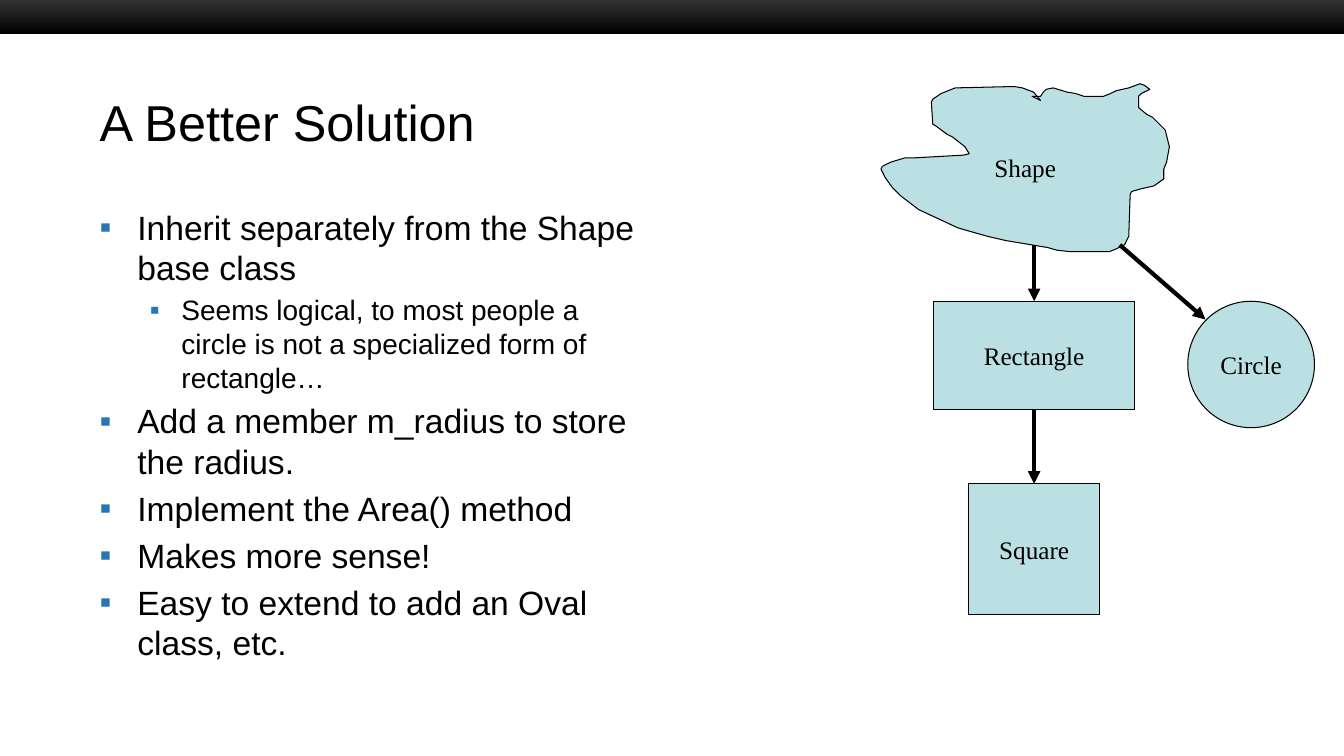
from lxml import etree
from pptx import Presentation
from pptx.dml.color import RGBColor
from pptx.enum.shapes import MSO_CONNECTOR, MSO_SHAPE
from pptx.enum.text import MSO_ANCHOR, PP_ALIGN
from pptx.oxml.ns import qn
from pptx.util import Pt

RECT = MSO_SHAPE.RECTANGLE
OVAL = MSO_SHAPE.OVAL
LINE = MSO_CONNECTOR.STRAIGHT
MIDDLE = MSO_ANCHOR.MIDDLE
LEFT = PP_ALIGN.LEFT
CENTER = PP_ALIGN.CENTER
TOP, BOTTOM = 0, 2

BLACK = "000000"
TEAL = "BBE0E3"
BLUE = "2675B4"

LEVELS = [(24, 27), (20, 58.5)]
HANGS = [27, 22.5]
POINTS = [
    (0, "Inherit separately from the Shape base class"),
    (1, "Seems logical, to most people a circle is not a specialized form of rectangle…"),
    (0, "Add a member m_radius to store the radius."),
    (0, "Implement the Area() method"),
    (0, "Makes more sense!"),
    (0, "Easy to extend to add an Oval class, etc."),
]
BLOB = [
    (113.8, 11.5), (109.4, 6.5), (100.8, 2.9), (95, 2.2), (53.3, 2.9),
    (43.2, 7.2), (36.7, 10.8), (36, 13), (37.4, 28.8), (38.9, 30.2),
    (46.8, 36), (51.1, 38.2), (59.8, 45.4), (62.6, 49.7), (59, 51.1),
    (23, 52.6), (17.3, 53.3), (7.2, 56.2), (1.4, 59), (0, 61.2),
    (2.9, 67), (7.9, 74.2), (13.7, 79.9), (27.4, 90), (39.6, 96.5),
    (55.4, 103), (75.6, 109.4), (89.3, 112.3), (100.8, 113.8),
    (118.8, 116.6), (126, 118.8), (136.1, 120.2), (163.4, 119.5),
    (168.5, 118.1), (174.2, 115.2), (177.1, 109.4), (177.8, 79.2),
    (179.3, 77), (185.8, 74.9), (195.1, 72.7), (201.6, 67.7),
    (202.3, 61.2), (204.5, 56.2), (205.9, 44.6), (203, 33.1),
    (197.3, 27.4), (193.7, 23.8), (190.1, 21.6), (183.6, 16.6),
    (184.3, 8.6), (185.8, 7.2), (191.5, 4.3), (187.9, 0.7), (185, 0.4),
    (177.1, 2.9), (167.8, 5), (164.2, 7.2), (159.1, 9.4), (144.7, 8.6),
    (139, 7.2), (133.2, 5.8), (123.1, 2.9), (118.1, 4.3), (116, 6.5),
    (113.8, 8.6), (108, 8.6),
]


def color(text):
    return RGBColor.from_string(text)


def set_font(para, name, size):
    para.font.name = name
    para.font.size = Pt(size)
    para.font.color.rgb = color(BLACK)


def add_bar(slide, box):
    bar = slide.shapes.add_shape(RECT, *map(Pt, box))
    bar.shadow.inherit = False
    bar.line.fill.background()
    bar.fill.gradient()
    bar.fill.gradient_angle = 270
    for stop, (place, tone) in zip(bar.fill.gradient_stops, [(0, "333333"), (1, BLACK)]):
        stop.position = place
        stop.color.rgb = color(tone)


def add_title(slide, box):
    title = slide.shapes.title
    title.left, title.top, title.width, title.height = map(Pt, box)
    frame = title.text_frame
    frame.text = "A Better Solution"
    frame.vertical_anchor = MIDDLE
    para = frame.paragraphs[0]
    para.alignment = LEFT
    set_font(para, "Arial", 36)


def add_bullet(para, level):
    props = para._p.get_or_add_pPr()
    props.set("marL", str(Pt(LEVELS[level][1])))
    props.set("indent", str(-Pt(HANGS[level])))
    tint = etree.SubElement(props, qn("a:buClr"))
    etree.SubElement(tint, qn("a:srgbClr"), val=BLUE)
    etree.SubElement(props, qn("a:buFont"), typeface="Arial")
    etree.SubElement(props, qn("a:buChar"), char="▪")


def add_body(slide, box):
    frame = slide.shapes.add_textbox(*map(Pt, box)).text_frame
    frame.word_wrap = True
    for index, (level, text) in enumerate(POINTS):
        para = frame.add_paragraph() if index else frame.paragraphs[0]
        para.text = text
        para.level = level
        add_bullet(para, level)
        size = LEVELS[level][0]
        para.space_before = Pt(size * 0.2 if index else 0)
        set_font(para, "Arial", size)


def style_node(node, text):
    node.shadow.inherit = False
    node.fill.solid()
    node.fill.fore_color.rgb = color(TEAL)
    node.line.color.rgb = color(BLACK)
    node.line.width = Pt(0.75)
    frame = node.text_frame
    frame.text = text
    frame.vertical_anchor = MIDDLE
    para = frame.paragraphs[0]
    para.alignment = CENTER
    set_font(para, "Times New Roman", 18)


def add_node(slide, kind, text, box):
    node = slide.shapes.add_shape(kind, *map(Pt, box))
    style_node(node, text)
    return node


def add_blob(slide, text, left, top):
    start, *rest = BLOB
    path = slide.shapes.build_freeform(*start, scale=Pt(1))
    path.add_line_segments(rest, close=True)
    style_node(path.convert_to_shape(Pt(left), Pt(top)), text)


def add_arrow(slide, start, end):
    arrow = slide.shapes.add_connector(LINE, *map(Pt, start + end))
    arrow.line.color.rgb = color(BLACK)
    arrow.line.width = Pt(3)
    etree.SubElement(arrow.line._get_or_add_ln(), qn("a:tailEnd"), type="triangle")
    etree.SubElement(arrow._element.spPr, qn("a:effectLst"))
    return arrow


def add_tree(slide, box):
    left, top, width, height = box
    mid = left + 109.4
    row = top + 155.4
    low = top + height - 93.6
    add_blob(slide, "Shape", left, top)
    block = add_node(slide, RECT, "Rectangle", (mid - 72, row, 144, 77.2))
    drop = add_arrow(slide, (mid, top + 115.2), (mid, row))
    drop.end_connect(block, TOP)
    link = add_arrow(slide, (mid, row + 77.2), (mid, low))
    square = add_node(slide, RECT, "Square", (mid - 46.8, low, 93.6, 93.6))
    link.begin_connect(block, BOTTOM)
    link.end_connect(square, TOP)
    add_node(slide, OVAL, "Circle", (left + width - 90.5, row, 90.5, 90.3))
    add_arrow(slide, (left + 170.6, top + 115.2), (left + 231.8, row + 13))


def main():
    deck = Presentation()
    deck.slide_width, deck.slide_height = Pt(960), Pt(540)
    slide = deck.slides.add_slide(deck.slide_layouts[5])
    add_bar(slide, (0, 0, 960, 24))
    add_title(slide, (64, 60, 832, 54))
    add_body(slide, (64, 144, 408, 306))
    add_tree(slide, (629.3, 59.8, 309.6, 379.4))
    deck.save("out.pptx")


if __name__ == "__main__":
    main()
